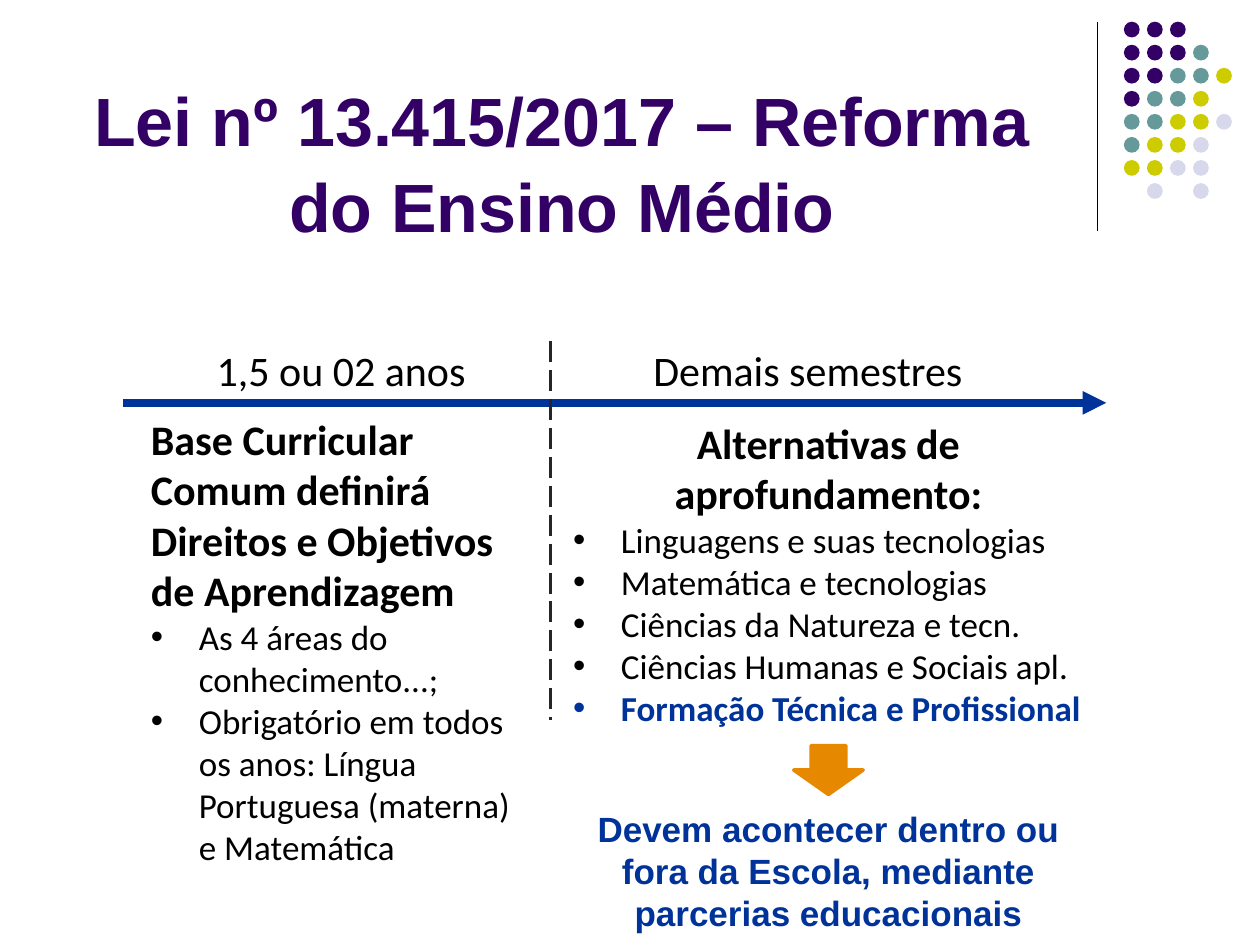
from dataclasses import dataclass

from lxml.etree import SubElement
from pptx import Presentation
from pptx.dml.color import RGBColor
from pptx.enum.dml import MSO_LINE_DASH_STYLE as Dash
from pptx.enum.shapes import MSO_CONNECTOR as Connector, MSO_SHAPE as Shape
from pptx.enum.text import MSO_ANCHOR as Anchor, MSO_AUTO_SIZE as AutoSize, PP_ALIGN as Align
from pptx.oxml.ns import qn
from pptx.util import Inches, Pt


@dataclass(frozen=True)
class Theme:
    """Colours, fonts and type sizes of the slide."""
    black: str = "000000"
    purple: str = "330066"
    teal: str = "669999"
    lime: str = "CCCC00"
    lilac: str = "D8D8EC"
    blue: str = "003399"
    grey: str = "262626"
    orange: str = "E68900"
    display: str = "Arial"
    body: str = "Calibri"
    title_size: float = 39
    heading_size: float = 24
    item_size: float = 20
    indent: float = 0.38


@dataclass(frozen=True)
class Box:
    """A region in inches, from which shares can be cut."""
    left: float
    top: float
    width: float
    height: float

    def share(self, x, y, w, h):
        """Return the sub-region at the given shares of this one."""
        return Box(self.left + x * self.width, self.top + y * self.height,
                   w * self.width, h * self.height)

    def emu(self):
        """Return the four lengths for python-pptx."""
        return [Inches(v) for v in (self.left, self.top, self.width, self.height)]


THEME = Theme()
PAGE = Box(0, 0, 10, 7.5)
DOT_COLOURS = {"P": THEME.purple, "T": THEME.teal, "L": THEME.lime, "I": THEME.lilac}
DOT_ROWS = ["PPP", "PPPT", "PPTTL", "PTTL", "TTLLI", "TLLI", "LLII", " I I"]


def rgb(colour):
    """Turn a hex string into a colour."""
    return RGBColor.from_string(colour)


def write(frame, text, *, size, font=THEME.body, colour=THEME.black, bold=False,
          align=Align.LEFT, bullet=False, before=0):
    """Add one formatted paragraph to a text frame."""
    first = frame.paragraphs[0]
    paragraph = first if not first.runs else frame.add_paragraph()
    paragraph.alignment = align
    paragraph.space_before = Pt(before)
    run = paragraph.add_run()
    run.text = text
    run.font.size, run.font.name, run.font.bold = Pt(size), font, bold
    run.font.color.rgb = rgb(colour)
    if bullet:
        properties = paragraph._p.get_or_add_pPr()
        properties.set("marL", str(Inches(THEME.indent)))
        properties.set("indent", str(-Inches(THEME.indent)))
        SubElement(properties, qn("a:buFont"), typeface="Arial")
        SubElement(properties, qn("a:buChar"), char="•")


def text_area(slide, box):
    """Add a wrapping text box and return its frame."""
    frame = slide.shapes.add_textbox(*box.emu()).text_frame
    frame.word_wrap = True
    return frame


def draw_line(slide, start, end, colour, width, dash=None, arrow=False):
    """Draw a straight line without shadow."""
    line = slide.shapes.add_connector(Connector.STRAIGHT, *map(Inches, (*start, *end)))
    line.line.color.rgb = rgb(colour)
    line.line.width = Pt(width)
    if dash:
        line.line.dash_style = dash
    if arrow:
        SubElement(line.line._get_or_add_ln(), qn("a:tailEnd"), type="triangle")
    SubElement(line._element.spPr, qn("a:effectLst"))


def fill_shape(shape, colour, outline=None):
    """Give a shape a flat fill and an optional outline."""
    shape.shadow.inherit = False
    shape.fill.solid()
    shape.fill.fore_color.rgb = rgb(colour)
    if outline:
        shape.line.color.rgb = rgb(colour)
        shape.line.width = Pt(outline)
    else:
        shape.line.fill.background()


def draw_ornament(slide, box):
    """Draw the vertical rule and the grid of dots."""
    draw_line(slide, (box.left, box.top), (box.left, box.top + box.height), THEME.black, 0.75)
    pitch, size = 0.183, 0.125
    dots = slide.shapes.add_group_shape()
    for row, marks in enumerate(DOT_ROWS):
        for column, mark in enumerate(marks):
            if mark in DOT_COLOURS:
                spot = Box(box.left + 0.21 + column * pitch, box.top + row * pitch, size, size)
                fill_shape(dots.shapes.add_shape(Shape.OVAL, *spot.emu()), DOT_COLOURS[mark])


def place_title(slide, box):
    """Place the two-line title."""
    title = slide.shapes.title
    title.left, title.top, title.width, title.height = box.emu()
    frame = title.text_frame
    frame.word_wrap, frame.auto_size = True, AutoSize.NONE
    frame.vertical_anchor = Anchor.TOP
    frame.margin_top = Inches(0.48)
    for text, before in (("Lei nº 13.415/2017 – Reforma", 0), ("do Ensino Médio", 2)):
        write(frame, text, size=THEME.title_size, font=THEME.display, colour=THEME.purple,
              bold=True, align=Align.CENTER, before=before)


def draw_timeline(slide, box):
    """Draw the time arrow, its divider and the two period labels."""
    axis, divider = box.top + 0.49, box.left + 3.39
    draw_line(slide, (box.left, axis), (box.left + box.width, axis), THEME.blue, 4.5, arrow=True)
    draw_line(slide, (divider, box.top), (divider, box.top + box.height), THEME.grey, 1.5,
              dash=Dash.LONG_DASH)
    for period, x in (("Demais semestres", 0.505), ("1,5 ou 02 anos", 0.03)):
        label = text_area(slide, box.share(x, -0.007, 0.383, 0.166))
        write(label, period, size=THEME.heading_size, align=Align.CENTER)


def place_stage(slide, box, heading, items, align=Align.LEFT, highlight=None):
    """Place one stage: a bold heading above bulleted items."""
    frame = text_area(slide, box)
    write(frame, heading, size=THEME.heading_size, bold=True, align=align)
    for item in items:
        chosen = item == highlight
        write(frame, item, size=THEME.item_size, bold=chosen, bullet=True,
              colour=THEME.blue if chosen else THEME.black)


def place_outcome(slide, box):
    """Place the down arrow and the conclusion under it."""
    arrow = slide.shapes.add_shape(Shape.DOWN_ARROW, *box.share(0.438, 0, 0.124, 0.25).emu())
    fill_shape(arrow, THEME.orange, outline=2)
    write(text_area(slide, box.share(0, 0.284, 1, 0.716)),
          "Devem acontecer dentro ou fora da Escola, mediante parcerias educacionais",
          size=THEME.item_size, font=THEME.display, colour=THEME.blue, bold=True,
          align=Align.CENTER)


def main():
    """Build and save the slide."""
    deck = Presentation()
    deck.slide_width, deck.slide_height = Inches(PAGE.width), Inches(PAGE.height)
    slide = deck.slides.add_slide(deck.slide_layouts[5])
    draw_ornament(slide, PAGE.share(0.871, 0.023, 0.11, 0.221))
    place_title(slide, PAGE.share(0.009, 0.019, 0.874, 0.209))
    draw_timeline(slide, PAGE.share(0.098, 0.361, 0.78, 0.401))
    place_stage(slide, PAGE.share(0.11, 0.431, 0.323, 0.499),
                "Base Curricular Comum definirá Direitos e Objetivos de Aprendizagem",
                ["As 4 áreas do conhecimento...;",
                 "Obrigatório em todos os anos: Língua Portuguesa (materna) e Matemática"])
    technical = "Formação Técnica e Profissional"
    place_stage(slide, PAGE.share(0.445, 0.435, 0.425, 0.345), "Alternativas de aprofundamento:",
                ["Linguagens e suas tecnologias", "Matemática e tecnologias",
                 "Ciências da Natureza e tecn.", "Ciências Humanas e Sociais apl.", technical],
                align=Align.CENTER, highlight=technical)
    place_outcome(slide, PAGE.share(0.435, 0.789, 0.445, 0.207))
    deck.save("out.pptx")


if __name__ == "__main__":
    main()
